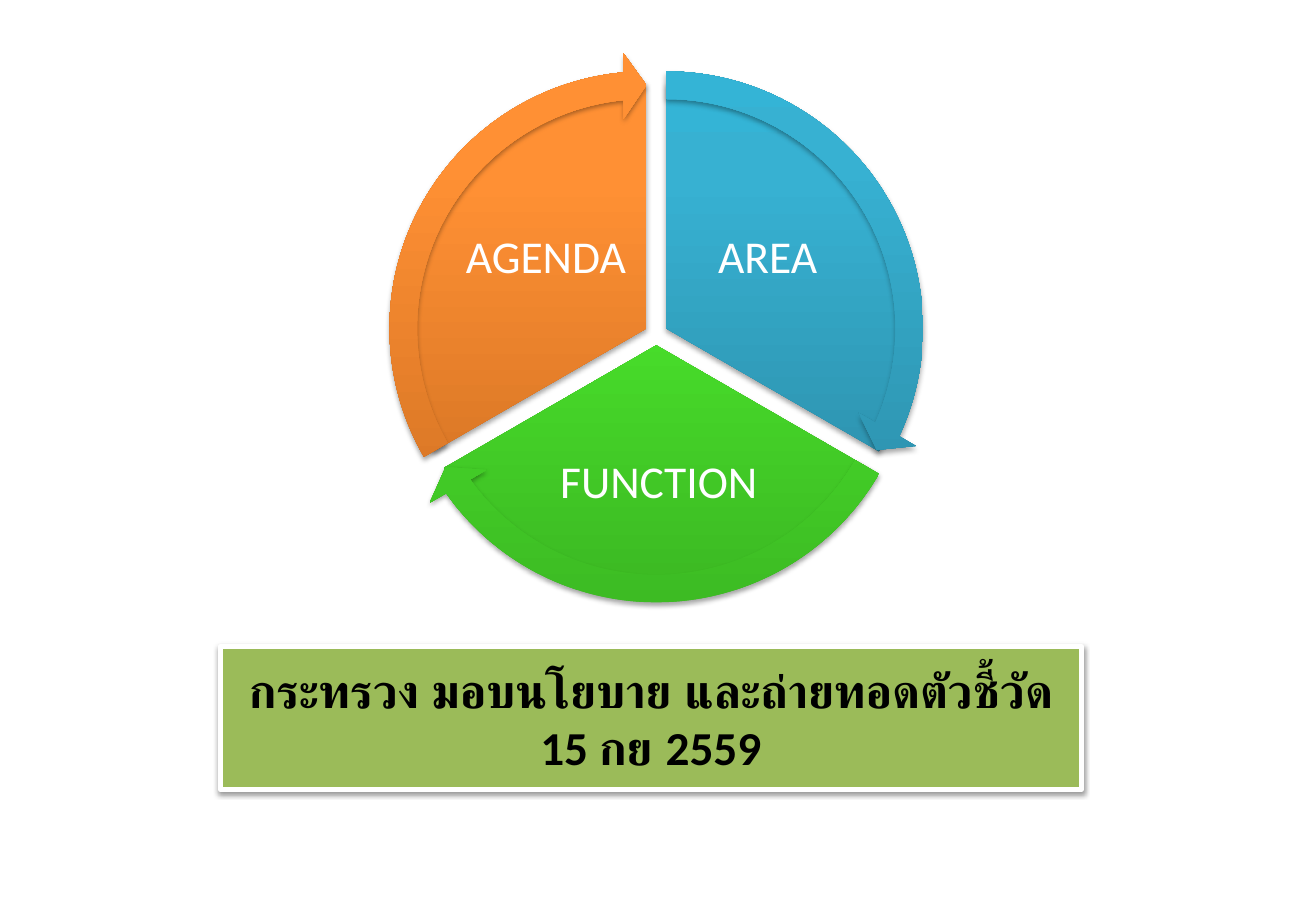
from copy import deepcopy
from math import cos, radians, sin

from lxml import etree
from pptx import Presentation
from pptx.dml.color import RGBColor
from pptx.enum.shapes import MSO_SHAPE
from pptx.enum.text import MSO_ANCHOR, PP_ALIGN
from pptx.oxml.ns import qn
from pptx.util import Pt

PIE, ARROW, RECT = MSO_SHAPE.PIE, MSO_SHAPE.CIRCULAR_ARROW, MSO_SHAPE.RECTANGLE
MIDDLE, CENTER = MSO_ANCHOR.MIDDLE, PP_ALIGN.CENTER

# Name, start and end angle, gradient from the bottom up, label box from the hub
PARTS = [
    ("AREA", 270, 30, ("2A88A2", "37B1D2", "34B4D6"), (14, -88, 104, 86.5)),
    ("FUNCTION", 30, 150, ("3CB923", "4EF02E", "4CF52A"), (-76.5, 50.5, 156, 76.5)),
    ("AGENDA", 150, 270, ("CC6E20", "FF9034", "FF9136"), (-117.5, -88, 104, 86.5)),
]
STOPS = (0, 0.8, 1)
TIP = 5.46  # degrees taken by an arrow tip
PUSH = 6.7  # distance of each part from the hub


def color(code):
    return RGBColor.from_string(code)


def put(item, values):
    for name, value in values.items():
        setattr(item, name, value)


def shade(shape, alpha, dist):
    """Soft shadow straight below the shape."""
    shape.shadow.inherit = False
    effects = shape._element.spPr.find(qn("a:effectLst"))
    drop = etree.SubElement(effects, qn("a:outerShdw"), blurRad=str(Pt(3.1)),
                            dist=str(Pt(dist)), dir="5400000", rotWithShape="0")
    black = etree.SubElement(drop, qn("a:srgbClr"), val="000000")
    etree.SubElement(black, qn("a:alpha"), val=str(alpha * 1000))


def blend(shape, codes):
    """Three-stop gradient that runs upward."""
    fill = shape.fill
    fill.gradient()
    fill.gradient_angle = 90
    stops = shape._element.spPr.find(".//" + qn("a:gsLst"))
    stops.append(deepcopy(stops[0]))
    for stop, place, code in zip(fill.gradient_stops, STOPS, codes):
        stop.position = place
        stop.color.rgb = color(code)


def write(shape, text, form, line=1.0):
    frame = shape.text_frame
    put(frame, {"word_wrap": True, "vertical_anchor": MIDDLE})
    para = frame.paragraphs[0]
    put(para, {"alignment": CENTER, "line_spacing": line})
    run = para.add_run()
    run.text = text
    put(run.font, {"name": "Calibri", "size": Pt(form["size"]), "bold": form["bold"]})
    run.font.color.rgb = color(form["color"])


def disc(slide, kind, hub, size, part, adjust):
    """One pie or arrow, pushed out from the hub along its middle angle."""
    _, start, end, codes, _ = part
    mid = radians(start + (end - start) % 360 / 2)
    left = hub[0] + PUSH * cos(mid) - size / 2
    top = hub[1] + PUSH * sin(mid) - size / 2
    shape = slide.shapes.add_shape(kind, Pt(left), Pt(top), Pt(size), Pt(size))
    for spot, value in enumerate(adjust):
        shape.adjustments[spot] = value
    blend(shape, codes)
    shape.line.fill.background()
    shade(shape, 35, 1.8)


def label(slide, hub, part):
    name, *_, (left, top, width, height) = part
    box = slide.shapes.add_textbox(Pt(hub[0] + left), Pt(hub[1] + top), Pt(width), Pt(height))
    put(box.text_frame, {"margin_" + side: Pt(2.7)
                         for side in ("left", "top", "right", "bottom")})
    write(box, name, {"size": 27, "bold": False, "color": "FFFFFF"}, 0.9)


def cycle(slide, left, top, size):
    """Three pie parts with labels, then an arrow around each."""
    hub = left + size / 2, top + size / 2
    # Adjustments hold angles as 0.6 per degree
    for part in PARTS:
        disc(slide, PIE, hub, size * 8 / 9, part, (part[1] * 0.6, part[2] * 0.6))
        label(slide, hub, part)
    for part in PARTS:
        _, start, end, *_ = part
        turn = (0.05, TIP * 0.6, (end - TIP) * 0.6, start * 0.6, 0.06)
        disc(slide, ARROW, hub, size, part, turn)


def banner(slide, left, top, width, height):
    """Green box with the policy note."""
    box = slide.shapes.add_shape(RECT, Pt(left), Pt(top), Pt(width), Pt(height))
    box.fill.solid()
    box.fill.fore_color.rgb = color("9BBB59")
    box.line.color.rgb = color("FFFFFF")
    box.line.width = Pt(3)
    shade(box, 38, 1.6)
    write(box, "กระทรวง มอบนโยบาย และถ่ายทอดตัวชี้วัด 15 กย 2559",
          {"size": 28, "bold": True, "color": "000000"})


def main():
    deck = Presentation()
    put(deck, {"slide_width": Pt(780), "slide_height": Pt(540)})
    slide = deck.slides.add_slide(deck.slide_layouts[6])
    banner(slide, 130.5, 383, 510.5, 85)
    cycle(slide, 225.2, 34.2, 327.6)
    deck.save("out.pptx")


if __name__ == "__main__":
    main()
